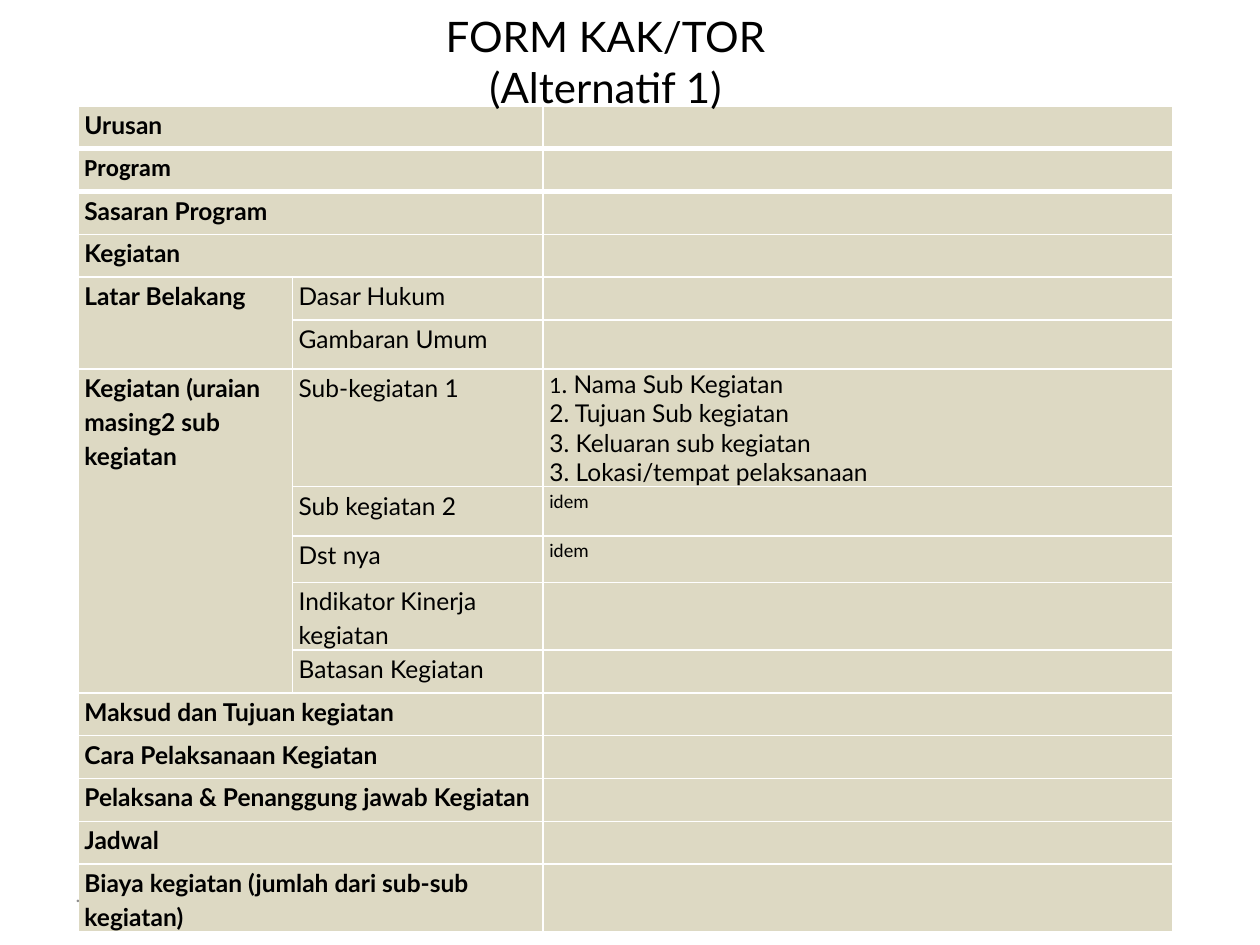
from lxml.etree import SubElement
from pptx import Presentation
from pptx.dml.color import RGBColor
from pptx.enum.text import MSO_ANCHOR, MSO_AUTO_SIZE, PP_ALIGN
from pptx.oxml.ns import qn
from pptx.util import Inches, Pt

BLACK = RGBColor(0, 0, 0)
WHITE = RGBColor(255, 255, 255)
GRAY = RGBColor(0x8C, 0x8C, 0x8C)
SAND = RGBColor(0xDD, 0xD9, 0xC3)

TITLE = "FORM KAK/TOR (Alternatif 1)"
DETAILS = [
    "1. Nama Sub Kegiatan",
    "2. Tujuan Sub kegiatan",
    "3. Keluaran sub kegiatan",
    "3. Lokasi/tempat pelaksanaan",
]
SECTIONS = [
    ("Urusan", []),
    ("Program", []),
    ("Sasaran Program", []),
    ("Kegiatan", []),
    ("Latar Belakang", [("Dasar Hukum", ""), ("Gambaran Umum", "")]),
    ("Kegiatan (uraian masing2 sub kegiatan", [
        ("Sub-kegiatan 1", DETAILS),
        ("Sub kegiatan 2", "idem"),
        ("Dst nya", "idem"),
        ("Indikator Kinerja kegiatan", ""),
        ("Batasan Kegiatan", ""),
    ]),
    ("Maksud dan Tujuan kegiatan", []),
    ("Cara Pelaksanaan Kegiatan", []),
    ("Pelaksana & Penanggung jawab Kegiatan", []),
    ("Jadwal", []),
    ("Biaya kegiatan (jumlah dari sub-sub kegiatan)", []),
]
COLUMNS = [1.7, 1.99, 5]
ROW_HEIGHT = 0.34
TALL_ROWS = {5: 0.39, 6: 0.93, 7: 0.39, 8: 0.37, 9: 0.53, 15: 0.53}
THICK_EDGES = {1, 2}


def write(para, text, size=14, font="Lato", color=BLACK, bold=False,
          align=None, spacing=None, after=None):
    para.alignment = align
    para.line_spacing = spacing
    para.space_after = after
    span = para.add_run()
    span.text = text
    span.font.size = Pt(size)
    span.font.name = font
    span.font.bold = bold
    span.font.color.rgb = color
    return span


def write_cell(cell, text, **style):
    write(cell.text_frame.paragraphs[0], text, spacing=1.15, after=Pt(10), **style)


def style_cell(cell, row):
    cell.margin_left = cell.margin_right = Inches(0.05)
    cell.margin_top = cell.margin_bottom = 0
    widths = {"lnL": 1, "lnR": 1,
              "lnT": 3 if row in THICK_EDGES else 1,
              "lnB": 3 if row + 1 in THICK_EDGES else 1}
    properties = cell._tc.get_or_add_tcPr()
    for side, width in widths.items():
        line = SubElement(properties, qn(f"a:{side}"), w=str(Pt(width)))
        fill = SubElement(line, qn("a:solidFill"))
        SubElement(fill, qn("a:srgbClr"), val=str(WHITE))
    cell.fill.solid()
    cell.fill.fore_color.rgb = SAND
    cell.text_frame.paragraphs[0].font.size = Pt(14)


def add_form(page):
    heights = [TALL_ROWS.get(row, ROW_HEIGHT)
               for row in range(sum(len(parts) or 1 for _, parts in SECTIONS))]
    table = page.shapes.add_table(
        len(heights), len(COLUMNS), Inches(0.62), Inches(0.84),
        Inches(sum(COLUMNS)), Inches(sum(heights))).table
    table.first_row = table.horz_banding = False
    for column, width in zip(table.columns, COLUMNS):
        column.width = Inches(width)
    for row, height in enumerate(heights):
        table.rows[row].height = Inches(height)
        for column in range(len(COLUMNS)):
            style_cell(table.cell(row, column), row)

    row = 0
    for heading, parts in SECTIONS:
        cell = table.cell(row, 0)
        last = row + max(len(parts), 1) - 1
        cell.merge(table.cell(last, 0 if parts else 1))
        write_cell(cell, heading, bold=True,
                   font="Calibri" if heading == "Program" else "Lato")
        for offset, (label, content) in enumerate(parts):
            write_cell(table.cell(row + offset, 1), label)
            target = table.cell(row + offset, 2)
            if content is DETAILS:
                frame = target.text_frame
                for index, item in enumerate(content):
                    para = frame.add_paragraph() if index else frame.paragraphs[0]
                    if index:
                        write(para, item)
                    else:
                        write(para, item[0], size=12)
                        write(para, item[1:])
            elif content:
                write_cell(target, content, size=11, font="Calibri")
        row = last + 1


def place(box, left, top, width, height):
    box.left, box.top, box.width, box.height = map(Inches, (left, top, width, height))
    box.text_frame.word_wrap = True
    box.text_frame.auto_size = MSO_AUTO_SIZE.NONE
    box.text_frame.vertical_anchor = MSO_ANCHOR.MIDDLE
    return box.text_frame.paragraphs[0]


def main():
    deck = Presentation()
    deck.slide_width, deck.slide_height = Inches(10), Inches(7.5)
    page = deck.slides.add_slide(deck.slide_layouts[5])
    add_form(page)
    title = page.shapes.title
    write(place(title, 2.94, -0.27, 3.73, 1.51), TITLE, size=24, align=PP_ALIGN.CENTER)
    page.shapes._spTree.append(title._element)
    footer = page.shapes.add_textbox(0, 0, 0, 0)
    write(place(footer, 0.5, 6.95, 2.33, 0.3), ".", size=12, font="Calibri", color=GRAY)
    deck.save("out.pptx")


if __name__ == "__main__":
    main()
